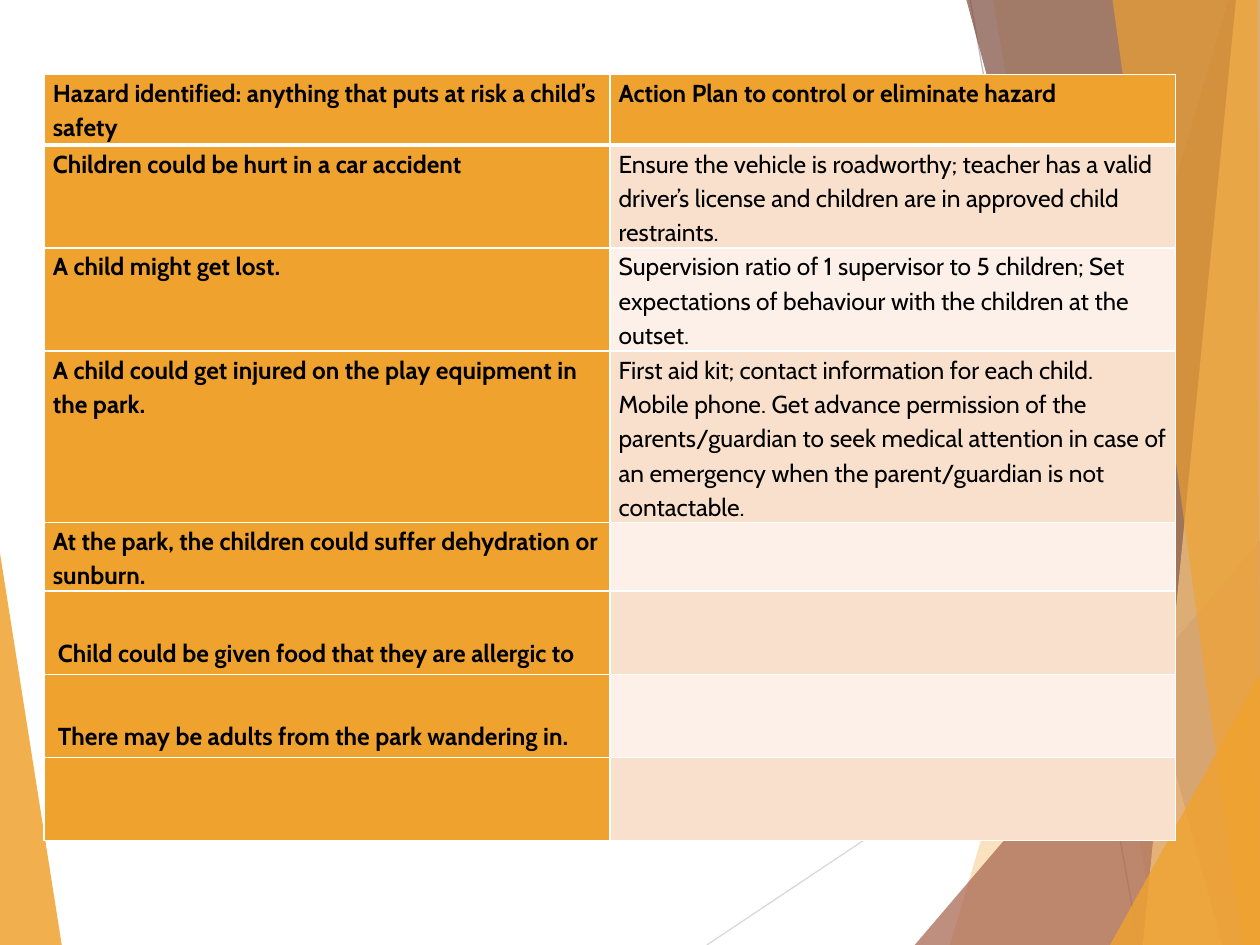
from dataclasses import dataclass

from lxml.etree import SubElement
from pptx import Presentation
from pptx.dml.color import RGBColor
from pptx.enum.shapes import MSO_CONNECTOR
from pptx.oxml.ns import qn
from pptx.oxml.xmlchemy import OxmlElement
from pptx.util import Inches, Pt


@dataclass(frozen=True)
class Theme:
    font: str = "Cabin"
    size: int = 14
    text: str = "000000"
    amber: str = "F0A22E"
    sand: str = "F6C782"
    clay: str = "A5644E"
    brown: str = "7C4B3B"
    band_dark: str = "F9E0CD"
    band_light: str = "FCF0E8"
    border: str = "FFFFFF"
    line_dark: str = "BFBFBF"
    line_light: str = "D9D9D9"


THEME = Theme()
WIDTH, HEIGHT = 10, 7.5

LEFT_WEDGE = ([(0, 4.39), (0.49, HEIGHT), (0, HEIGHT)], THEME.amber, 85)
# Outline, colour and opacity in percent, from back to front
RIGHT_FACETS = [
    ([(9.75, 0), (7.54, HEIGHT), (WIDTH, HEIGHT), (WIDTH, 0)], THEME.amber, 30),
    ([(7.88, 0), (9.19, HEIGHT), (WIDTH, HEIGHT), (WIDTH, 0)], THEME.amber, 20),
    ([(7.26, HEIGHT), (WIDTH, 4.29), (WIDTH, HEIGHT)], THEME.clay, 72),
    ([(7.67, 0), (9.7, HEIGHT), (WIDTH, HEIGHT), (WIDTH, 0)], THEME.brown, 70),
    ([(9.81, 0), (9.07, HEIGHT), (WIDTH, HEIGHT), (WIDTH, 0)], THEME.sand, 70),
    ([(8.83, 0), (9.86, HEIGHT), (WIDTH, HEIGHT), (9.98, 0)], THEME.amber, 65),
    ([(8.81, HEIGHT), (WIDTH, 5.35), (WIDTH, HEIGHT)], THEME.amber, 80),
]

# Hazard, action, row height
ROWS = [
    ("Hazard identified: anything that puts at risk a child’s safety",
     "Action Plan to control or eliminate hazard", 0.56),
    ("Children could be hurt in a car accident",
     "Ensure the vehicle is roadworthy; teacher has a valid driver’s license "
     "and children are in approved child restraints.", 0.81),
    ("A child might get lost.",
     "Supervision ratio of 1 supervisor to 5 children; Set expectations of "
     "behaviour with the children at the outset.", 0.82),
    ("A child could get injured on the play equipment in the park.",
     "First aid kit; contact information for each child. Mobile phone. Get "
     "advance permission of the parents/guardian to seek medical attention in "
     "case of an emergency when the parent/guardian is not contactable.", 1.36),
    ("At the park, the children could suffer dehydration or sunburn.", "", 0.54),
    ("Child could be given food that they are allergic to", "", 0.66),
    ("There may be adults from the park wandering in.", "", 0.66),
    ("", "", 0.66),
]
LOWERED_ROWS = (5, 6)


def paint(fill, color):
    fill.solid()
    fill.fore_color.rgb = RGBColor.from_string(color)


def add_facet(page, points, color, opacity):
    """Draw a borderless, see-through polygon."""
    corners = [(Inches(x), Inches(y)) for x, y in points]
    builder = page.shapes.build_freeform(*corners[0])
    builder.add_line_segments(corners[1:], close=True)
    facet = builder.convert_to_shape()
    facet.shadow.inherit = False
    facet.line.fill.background()
    paint(facet.fill, color)
    tint = facet._element.spPr.find(qn("a:solidFill"))[0]
    SubElement(tint, qn("a:alpha"), val=str(opacity * 1000))


def add_line(page, start, end, color):
    line = page.shapes.add_connector(
        MSO_CONNECTOR.STRAIGHT, *(Inches(value) for value in start + end))
    line.line.color.rgb = RGBColor.from_string(color)
    line.line.width = Pt(0.75)
    SubElement(line._element.spPr, qn("a:effectLst"))


def set_borders(cell, top, bottom):
    """Put borders, with widths in points, ahead of the cell's fill."""
    properties = cell._tc.get_or_add_tcPr()
    widths = {"lnL": 1, "lnR": 1, "lnT": top, "lnB": bottom}
    for index, (side, width) in enumerate(widths.items()):
        border = OxmlElement(f"a:{side}")
        border.set("w", str(Pt(width)))
        fill = SubElement(border, qn("a:solidFill"))
        SubElement(fill, qn("a:srgbClr"), val=THEME.border)
        properties.insert(index, border)


def write_cell(cell, text, bold, lowered):
    cell.margin_left = Inches(0.11 if lowered else 0.07)
    cell.margin_right = Inches(0.07)
    cell.margin_top = Inches(0.34 if lowered else 0)
    cell.margin_bottom = 0
    para = cell.text_frame.paragraphs[0]
    para.text = text
    para.line_spacing = 1.15
    para.font.size = Pt(THEME.size)
    for span in para.runs:
        span.font.name = THEME.font
        span.font.size = Pt(THEME.size)
        span.font.bold = bold
        span.font.color.rgb = RGBColor.from_string(THEME.text)


def add_hazard_table(page):
    total = sum(height for _, _, height in ROWS)
    table = page.shapes.add_table(
        len(ROWS), 2, Inches(0.35), Inches(0.59), Inches(8.98), Inches(total)).table
    for row, (hazard, action, height) in enumerate(ROWS):
        table.rows[row].height = Inches(height)
        band = THEME.band_dark if row % 2 else THEME.band_light
        for column, text in enumerate((hazard, action)):
            cell = table.cell(row, column)
            strong = row == 0 or column == 0
            write_cell(cell, text, strong, row in LOWERED_ROWS and column == 0)
            paint(cell.fill, THEME.amber if strong else band)
            set_borders(cell, 3 if row == 1 else 1, 3 if row == 0 else 1)


def main():
    deck = Presentation()
    deck.slide_width, deck.slide_height = Inches(WIDTH), Inches(HEIGHT)
    page = deck.slides.add_slide(deck.slide_layouts[6])
    add_facet(page, *LEFT_WEDGE)
    add_line(page, (5.61, HEIGHT), (WIDTH, 4.57), THEME.line_light)
    add_line(page, (7.7, 0), (9.04, HEIGHT), THEME.line_dark)
    for facet in RIGHT_FACETS:
        add_facet(page, *facet)
    add_hazard_table(page)
    deck.save("out.pptx")


if __name__ == "__main__":
    main()
